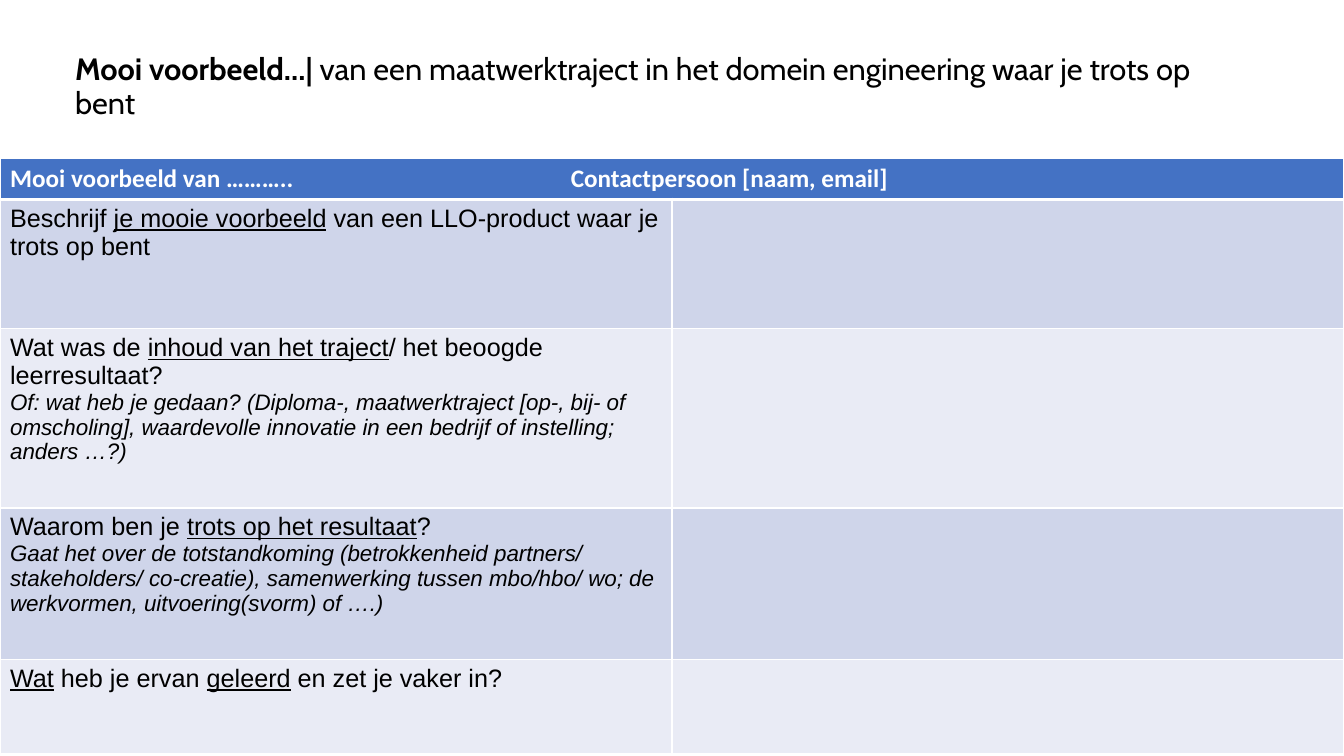
"""Build a slide with a title and a form for describing a good example."""
import lxml.etree
import pptx
import pptx.dml.color
import pptx.enum.text
import pptx.oxml.ns
import pptx.util

PX = 9525
COLORS = {"text": "000000", "white": "FFFFFF", "header": "4472C4",
          "dark band": "CFD5EA", "light band": "E9EBF5"}
ROW_HEIGHTS = [37, 123, 171, 144, 90]
CONTACT_TAB = 534
TITLE = [("Mooi voorbeeld…| ", "b"),
         ("van een maatwerktraject in het domein engineering waar je trots op bent", "")]
HEADER = "Mooi voorbeeld van ………..\tContactpersoon [naam, email]"
QUESTIONS = [
    [[("Beschrijf ", ""), ("je mooie voorbeeld", "u"),
      (" van een LLO-product waar je trots op bent", "")]],
    [[("Wat was de ", ""), ("inhoud van het traject", "u"),
      ("/ het beoogde leerresultaat?", "")],
     [("Of: wat heb je gedaan? (Diploma-, maatwerktraject [op-, bij- of omscholing], "
       "waardevolle innovatie in een bedrijf of instelling; anders …?)", "i")]],
    [[("Waarom ben je ", ""), ("trots op het resultaat", "u"), ("?", "")],
     [("Gaat het over de totstandkoming (betrokkenheid partners/ stakeholders/ "
       "co-creatie), samenwerking tussen mbo/hbo/ wo; de werkvormen, "
       "uitvoering(svorm) of ….)", "i")]],
    [[("Wat", "u"), (" heb je ervan ", ""), ("geleerd", "u"),
      (" en zet je vaker in?", "")]],
]


def px(length):
    return pptx.util.Emu(length * PX)


def rgb(name):
    return pptx.dml.color.RGBColor.from_string(COLORS[name])


def add_spans(para, spans, size, font, color="text"):
    for text, marks in spans:
        span = para.add_run()
        span.text = text
        span.font.name = font
        span.font.size = pptx.util.Pt(size)
        span.font.color.rgb = rgb(color)
        span.font.bold = "b" in marks
        span.font.italic = "i" in marks
        span.font.underline = "u" in marks


def add_child(parent, tag, **attributes):
    return lxml.etree.SubElement(parent, pptx.oxml.ns.qn(tag), attributes)


def style_cell(cell, color, bottom=1):
    properties = cell._tc.get_or_add_tcPr()
    for side, width in {"L": 1, "R": 1, "T": 1, "B": bottom}.items():
        line = add_child(properties, f"a:ln{side}", w=str(pptx.util.Pt(width)))
        fill = add_child(line, "a:solidFill")
        add_child(fill, "a:srgbClr", val=COLORS["white"])
    cell.fill.solid()
    cell.fill.fore_color.rgb = rgb(color)


def fill_title(page):
    box = page.shapes.title
    box.left, box.top, box.width, box.height = map(px, (62, 14, 1142, 139))
    frame = box.text_frame
    frame.word_wrap = True
    frame.auto_size = pptx.enum.text.MSO_AUTO_SIZE.NONE
    frame.vertical_anchor = pptx.enum.text.MSO_ANCHOR.MIDDLE
    para = frame.paragraphs[0]
    para.alignment = pptx.enum.text.PP_ALIGN.LEFT
    para.line_spacing = 0.9
    add_spans(para, TITLE, 22, "Cabin")


def fill_header(table):
    for cell in table.rows[0].cells:
        style_cell(cell, "header", bottom=3)
    cell = table.cell(0, 0)
    cell.merge(table.cell(0, 1))
    para = cell.text_frame.paragraphs[0]
    tabs = add_child(para._p.get_or_add_pPr(), "a:tabLst")
    add_child(tabs, "a:tab", pos=str(px(CONTACT_TAB)), algn="l")
    add_spans(para, [(HEADER, "b")], 18, "Calibri", "white")


def fill_question(row, paragraphs, color):
    for cell in row.cells:
        style_cell(cell, color)
    frame = row.cells[0].text_frame
    for index, spans in enumerate(paragraphs):
        para = frame.add_paragraph() if index else frame.paragraphs[0]
        add_spans(para, spans, 16 if index else 18, "Arial")


def add_form(page):
    table = page.shapes.add_table(len(ROW_HEIGHTS), 2, px(0), px(151),
                                  px(1280), px(sum(ROW_HEIGHTS))).table
    for row, height in zip(table.rows, ROW_HEIGHTS):
        row.height = px(height)
    fill_header(table)
    for index, paragraphs in enumerate(QUESTIONS):
        color = "light band" if index % 2 else "dark band"
        fill_question(table.rows[index + 1], paragraphs, color)


def main():
    deck = pptx.Presentation()
    deck.slide_width, deck.slide_height = px(1280), px(720)
    page = deck.slides.add_slide(deck.slide_layouts[5])
    fill_title(page)
    add_form(page)
    deck.save("out.pptx")


if __name__ == "__main__":
    main()
